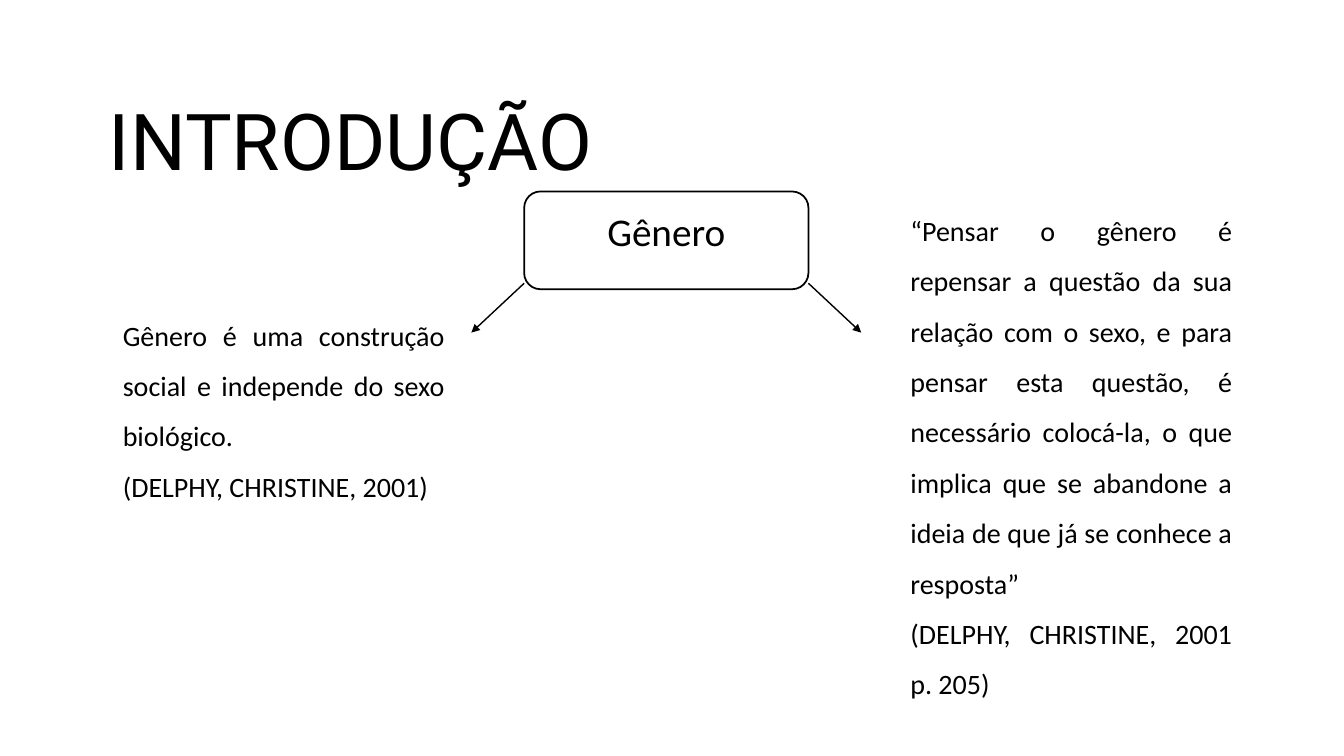
from dataclasses import dataclass

from lxml import etree
from pptx import Presentation
from pptx import util as u
from pptx.dml.color import RGBColor
from pptx.enum import shapes, text
from pptx.oxml.ns import qn


@dataclass(frozen=True)
class Theme:
    ink: RGBColor = RGBColor(0, 0, 0)
    paper: RGBColor = RGBColor(255, 255, 255)
    heading_font: str = "Roboto"
    body_font: str = "Calibri"
    heading_size: int = 56
    concept_size: int = 28
    quote_size: int = 20
    border: float = 1.25
    arrow: float = 1


def apply(target, values):
    for name, value in values.items():
        setattr(target, name, value)


class Board:
    """Draws on one slide; every length is a percentage of the slide's size."""

    def __init__(self, deck, theme):
        self.deck, self.theme = deck, theme
        title_only = deck.slide_layouts[5]
        self.slide = deck.slides.add_slide(title_only)

    def place(self, x, y):
        return (round(self.deck.slide_width * x / 100),
                round(self.deck.slide_height * y / 100))

    def set_text(self, holder, paragraphs, size, font, align,
                 spacing=1.0, anchor=text.MSO_ANCHOR.TOP):
        frame = holder.text_frame
        frame.text = "\n".join(paragraphs)
        apply(frame, {"word_wrap": True, "auto_size": text.MSO_AUTO_SIZE.NONE,
                      "vertical_anchor": anchor})
        for paragraph in frame.paragraphs:
            apply(paragraph, {"alignment": align, "line_spacing": spacing,
                              "space_before": u.Pt(0)})
            for run in paragraph.runs:
                apply(run.font, {"name": font, "size": u.Pt(size)})
                run.font.color.rgb = self.theme.ink

    def title(self, x, y, w, h, heading):
        holder = self.slide.shapes.title
        left, top = self.place(x, y)
        width, height = self.place(w, h)
        apply(holder, {"left": left, "top": top, "width": width, "height": height})
        self.set_text(holder, [heading], self.theme.heading_size,
                      self.theme.heading_font, text.PP_ALIGN.LEFT, 0.85,
                      text.MSO_ANCHOR.BOTTOM)

    def frame(self, x, y, w, h):
        outline = self.slide.shapes.add_shape(
            shapes.MSO_SHAPE.ROUNDED_RECTANGLE, *self.place(x, y), *self.place(w, h))
        outline.shadow.inherit = False
        outline.fill.solid()
        outline.fill.fore_color.rgb = self.theme.paper
        outline.line.color.rgb = self.theme.ink
        outline.line.width = u.Pt(self.theme.border)

    def passage(self, x, y, w, h, paragraphs, size, align, spacing=1.0):
        holder = self.slide.shapes.add_textbox(*self.place(x, y), *self.place(w, h))
        self.set_text(holder, paragraphs, size, self.theme.body_font, align, spacing)

    def arrow(self, start, end):
        link = self.slide.shapes.add_connector(
            shapes.MSO_CONNECTOR.STRAIGHT, *self.place(*start), *self.place(*end))
        link.line.color.rgb = self.theme.ink
        link.line.width = u.Pt(self.theme.arrow)
        properties = link._element.spPr
        etree.SubElement(properties.find(qn("a:ln")), qn("a:tailEnd"), type="triangle")
        etree.SubElement(properties, qn("a:effectLst"))


def main():
    deck = Presentation()
    deck.slide_width, deck.slide_height = u.Inches(13.33), u.Inches(7.5)
    theme = Theme()
    board = Board(deck, theme)

    board.title(7.35, 4.13, 82.5, 21.2, "INTRODUÇÃO")

    concept_left, concept_width, concept_top = 39, 21.15, 25.33
    board.frame(concept_left, concept_top, concept_width, 12.93)
    board.passage(concept_left + 0.3, 26.8, concept_width - 0.6, 13.87, ["Gênero"],
                  theme.concept_size, text.PP_ALIGN.CENTER)

    reach = 3.93
    for edge, step in ((concept_left + concept_width, reach), (concept_left, -reach)):
        board.arrow((edge, 37.47), (edge + step, 44))

    quotes = (
        (8.4, 39.2, 17.47, [
            "Gênero é uma construção social e independe do sexo biológico.",
            "(DELPHY, CHRISTINE, 2001)"]),
        (67, concept_top, 21.6, [
            "“Pensar o gênero é repensar a questão da sua relação com o sexo, e para "
            "pensar esta questão, é necessário colocá-la, o que implica que se abandone "
            "a ideia de que já se conhece a resposta”",
            "(DELPHY, CHRISTINE, 2001 p. 205)"]),
    )
    for left, top, height, paragraphs in quotes:
        board.passage(left, top, 25.43, height, paragraphs, theme.quote_size,
                      text.PP_ALIGN.JUSTIFY, 1.5)

    deck.save("out.pptx")


if __name__ == "__main__":
    main()
